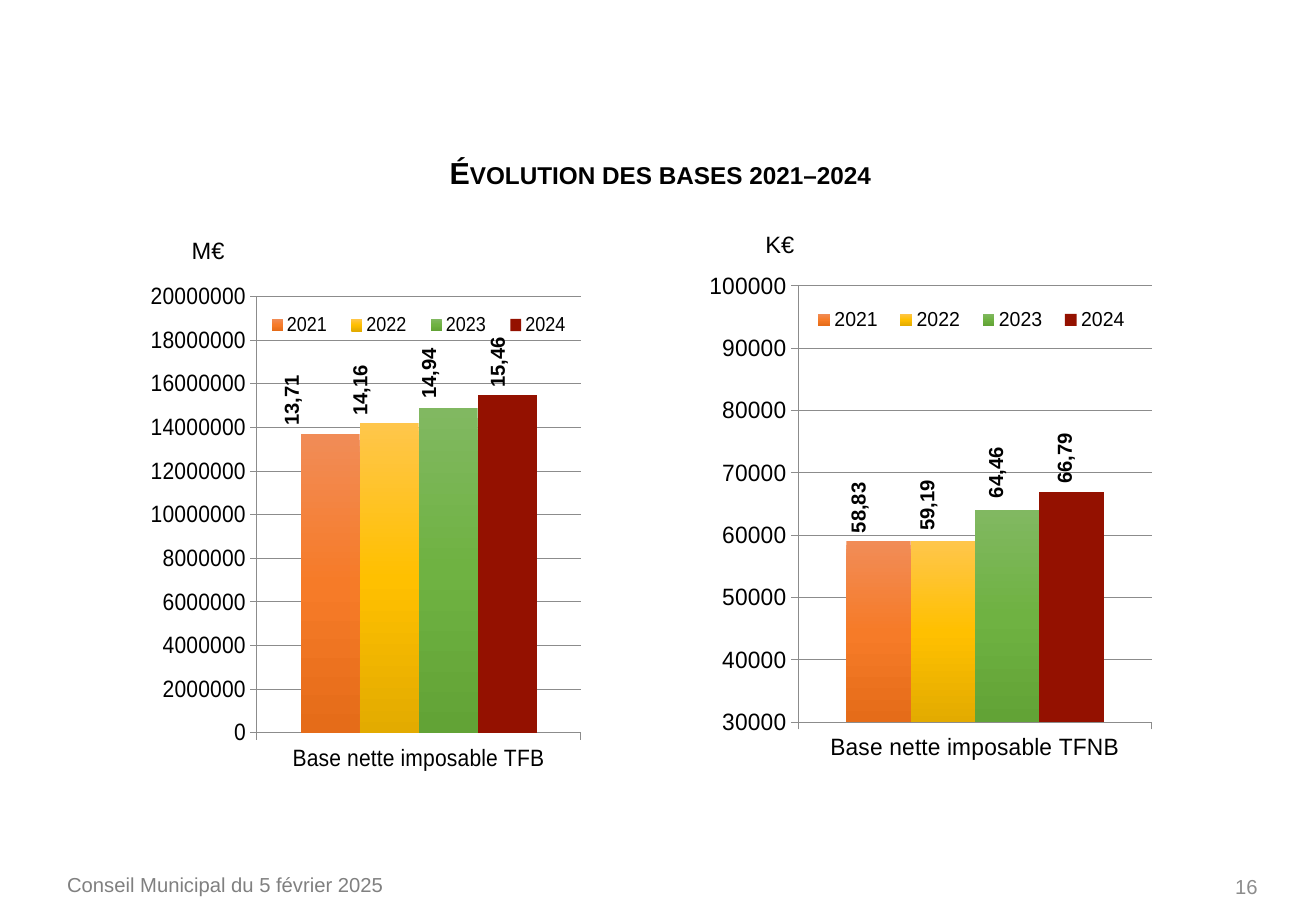
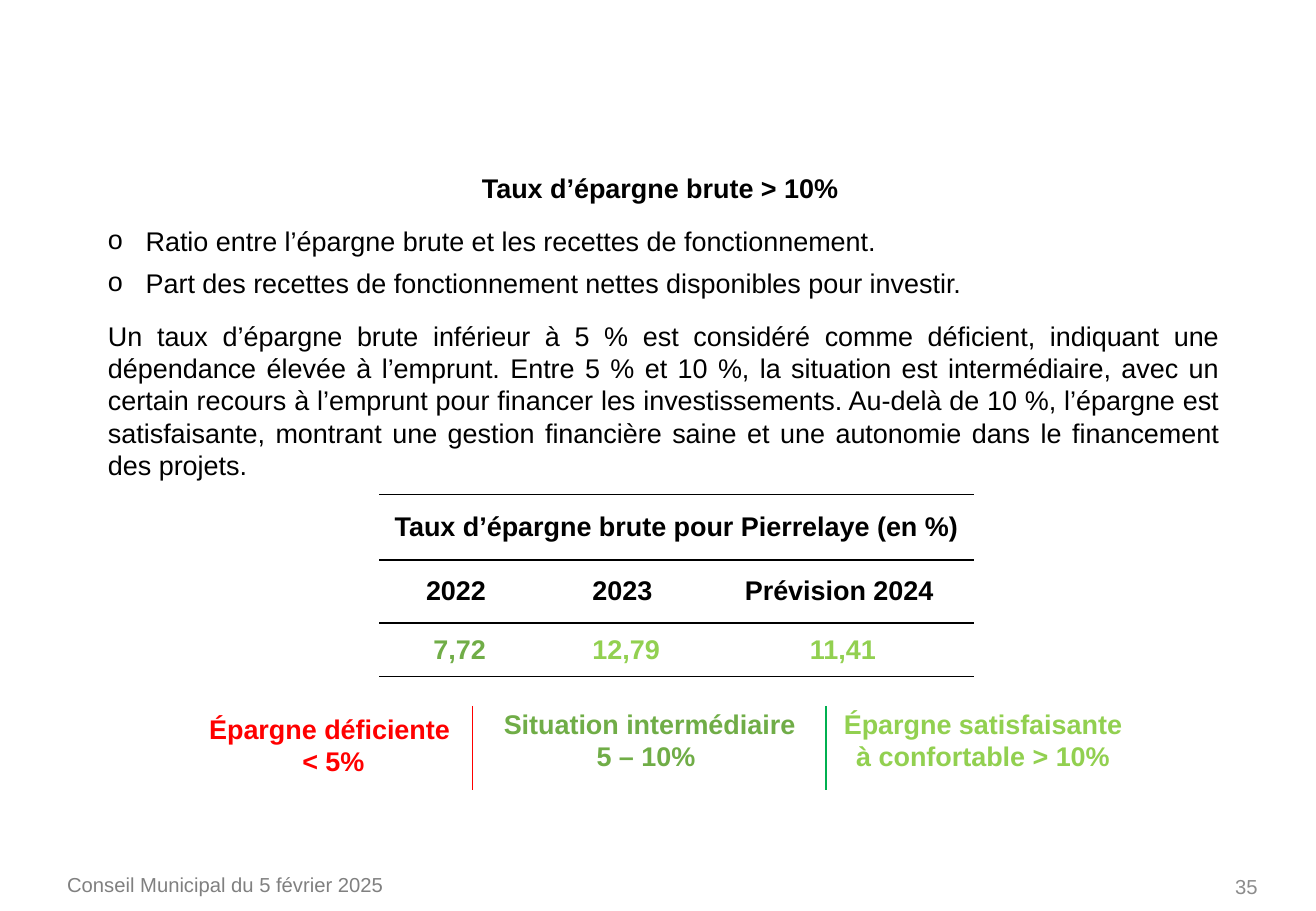
from pptx import Presentation
from pptx.chart.data import CategoryChartData
from pptx.dml.color import RGBColor
from pptx.enum.chart import XL_CHART_TYPE as ChartType, XL_LEGEND_POSITION as LegendPosition
from pptx.enum.shapes import MSO_CONNECTOR as Connector
from pptx.enum.text import MSO_ANCHOR as Anchor, PP_ALIGN as Align
from pptx.oxml import parse_xml
from pptx.oxml.ns import nsdecls
from pptx.util import Inches, Pt

BLACK = RGBColor(0x00, 0x00, 0x00)
FOOTER_GREY = RGBColor(0x80, 0x80, 0x80)
LINE_GREY = RGBColor(0x8C, 0x8C, 0x8C)
RED = RGBColor(0xFF, 0x00, 0x00)
DARK_RED = RGBColor(0x94, 0x11, 0x00)
GREEN = RGBColor(0x70, 0xAD, 0x47)
LIGHT_GREEN = RGBColor(0x92, 0xD0, 0x50)
DIVIDER_GREEN = RGBColor(0x00, 0xB0, 0x50)
ORANGE_SHADES = (RGBColor(0xF1, 0x8C, 0x57), RGBColor(0xF6, 0x7B, 0x28), RGBColor(0xE5, 0x6C, 0x19))
YELLOW_SHADES = (RGBColor(0xFF, 0xC6, 0x4B), RGBColor(0xFF, 0xC0, 0x00), RGBColor(0xE3, 0xAB, 0x00))
GREEN_SHADES = (RGBColor(0x81, 0xB8, 0x61), RGBColor(0x6F, 0xB2, 0x42), RGBColor(0x62, 0xA3, 0x36))
YEAR_FILLS = {"2021": ORANGE_SHADES, "2022": YELLOW_SHADES, "2023": GREEN_SHADES, "2024": DARK_RED}

FONT = "Arial"
FOOTER = "Conseil Municipal du 5 février 2025"
PLOT_HEIGHT = 0.836
CHART_TOP, CHART_HEIGHT = 29.67, 57.3
LABEL_STEP = 5.22


def write(paragraph, text, size=16, color=BLACK, bold=False, align=Align.LEFT,
          before=0, bullet=None, small_caps=False):
    paragraph.alignment = align
    if before:
        paragraph.space_before = Pt(before)
    if bullet:
        properties = paragraph._p.get_or_add_pPr()
        properties.set("marL", str(Inches(0.31)))
        properties.set("indent", str(Inches(-0.31)))
        properties.append(parse_xml(f'<a:buFont {nsdecls("a")} typeface="{FONT}"/>'))
        properties.append(parse_xml(f'<a:buChar {nsdecls("a")} char="{bullet}"/>'))
    run = paragraph.add_run()
    run.text = text
    run.font.name, run.font.size, run.font.bold = FONT, Pt(size), bold
    run.font.color.rgb = color
    if small_caps:
        run._r.get_or_add_rPr().set("cap", "small")


def manual_layout(x, y, width, height, inner=False):
    """Chart layout element, in shares of the chart's size."""
    target = '<c:layoutTarget val="inner"/>' if inner else ""
    return parse_xml(
        f'<c:layout {nsdecls("c")}><c:manualLayout>{target}'
        '<c:xMode val="edge"/><c:yMode val="edge"/>'
        f'<c:x val="{x}"/><c:y val="{y}"/><c:w val="{width}"/><c:h val="{height}"/>'
        '</c:manualLayout></c:layout>')


def cell_border(side, fill):
    return parse_xml(f'<a:{side} {nsdecls("a")} w="{Pt(1)}">{fill}</a:{side}>')


class Deck:
    """Style and current slide; lengths are percentages of the slide's size."""

    def __init__(self):
        self.presentation = Presentation()
        self.presentation.slide_width = Inches(10.83)
        self.presentation.slide_height = Inches(7.5)
        self.slide = None

    def columns(self, share):
        return int(self.presentation.slide_width * share / 100)

    def rows(self, share):
        return int(self.presentation.slide_height * share / 100)

    def place(self, left, top, width, height):
        return self.columns(left), self.rows(top), self.columns(width), self.rows(height)

    def new_slide(self, number):
        self.slide = self.presentation.slides.add_slide(self.presentation.slide_layouts[6])
        self.text((4.2, 95.07, 41.5, 4.9), FOOTER, size=12, color=FOOTER_GREY)
        self.text((73.98, 94.7, 22.5, 5.3), str(number), size=12, color=LINE_GREY,
                  align=Align.RIGHT, anchor=Anchor.MIDDLE)

    def text(self, box, *items, anchor=Anchor.TOP, rotation=0, **style):
        """Each item is a string, or a string with its own format."""
        shape = self.slide.shapes.add_textbox(*self.place(*box))
        shape.rotation = rotation
        frame = shape.text_frame
        frame.word_wrap = True
        frame.vertical_anchor = anchor
        for index, item in enumerate(items):
            paragraph = frame.add_paragraph() if index else frame.paragraphs[0]
            content, own = (item, {}) if isinstance(item, str) else item
            write(paragraph, content, **{**style, **own})

    def divider(self, x, top, bottom, color):
        line = self.slide.shapes.add_connector(
            Connector.STRAIGHT, self.columns(x), self.rows(top), self.columns(x), self.rows(bottom))
        line.line.color.rgb = color
        line.line.width = Pt(1)
        line.element.spPr.append(parse_xml(f'<a:effectLst {nsdecls("a")}/>'))

    def table(self, left, top, widths, heights, cells):
        """Each cell is a string and its colour; a row of one cell spans the table."""
        box = self.place(left, top, sum(widths), sum(heights))
        table = self.slide.shapes.add_table(len(heights), len(widths), *box).table
        table.first_row = table.horz_banding = False
        for column, width in zip(table.columns, widths):
            column.width = self.columns(width)
        for row, height in zip(table.rows, heights):
            row.height = self.rows(height)
        for row, contents in enumerate(cells):
            if len(contents) == 1:
                table.cell(row, 0).merge(table.cell(row, len(widths) - 1))
            for column, (text, color) in enumerate(contents):
                write(table.cell(row, column).text_frame.paragraphs[0], text,
                      color=color, bold=True, align=Align.CENTER)
        ruled = f'<a:solidFill><a:srgbClr val="{BLACK}"/></a:solidFill>'
        borders = {"lnL": "<a:noFill/>", "lnR": "<a:noFill/>", "lnT": ruled, "lnB": ruled}
        for cell in table.iter_cells():
            cell.vertical_anchor = Anchor.MIDDLE
            cell.fill.background()
            for index, (side, fill) in enumerate(borders.items()):
                cell._tc.get_or_add_tcPr().insert(index, cell_border(side, fill))

    def bar_chart(self, left, width, category, values, unit, digits, scale, plot, legend, first_label):
        """Bars by year, with upright labels that follow the bar tops."""
        data = CategoryChartData(number_format="General")
        data.categories = [category]
        for year, value in zip(YEAR_FILLS, values):
            data.add_series(year, [round(round(value, digits) * unit)])
        chart = self.slide.shapes.add_chart(
            ChartType.COLUMN_CLUSTERED, *self.place(left, CHART_TOP, width, CHART_HEIGHT), data).chart
        chart.has_title = False
        chart.font.name, chart.font.size = FONT, Pt(14)
        chart.font.color.rgb = BLACK
        self.style_bars(chart)
        self.style_axes(chart, scale)
        self.style_layout(chart, plot, legend)

        low, high, _ = scale
        label_left, label_top = first_label
        rise = PLOT_HEIGHT * CHART_HEIGHT * unit / (high - low)
        for index, value in enumerate(values):
            top = label_top - (value - values[0]) * rise
            self.text((label_left + index * LABEL_STEP, top, 6, 4),
                      f"{value:.2f}".replace(".", ","), size=12, bold=True, rotation=270)

    def style_bars(self, chart):
        plot = chart.plots[0]
        plot.gap_width, plot.overlap, plot.vary_by_categories = 150, 0, False
        gradients = []
        for series, color in zip(plot.series, YEAR_FILLS.values()):
            fill = series.format.fill
            if isinstance(color, RGBColor):
                fill.solid()
                fill.fore_color.rgb = color
            else:
                fill.gradient()
                fill.gradient_angle = 270
                gradients.append(color)
        for stops, shades in zip(chart.element.xpath(".//a:gsLst"), gradients):
            stops.clear()
            for index, shade in enumerate(shades):
                stops.append(parse_xml(f'<a:gs {nsdecls("a")} pos="{index * 50000}">'
                                       f'<a:srgbClr val="{shade}"/></a:gs>'))

    def style_axes(self, chart, scale):
        axis = chart.value_axis
        axis.minimum_scale, axis.maximum_scale, axis.major_unit = scale
        axis.has_major_gridlines = True
        for part in (axis, axis.major_gridlines, chart.category_axis):
            part.format.line.color.rgb = LINE_GREY
            part.format.line.width = Pt(0.5)

    def style_layout(self, chart, plot, legend):
        chart.has_legend = True
        chart.legend.position = LegendPosition.TOP
        chart.legend.include_in_layout = False
        chart.legend.font.name, chart.legend.font.size = FONT, Pt(12)
        chart.legend.font.color.rgb = BLACK
        for layout in chart.element.xpath(".//c:plotArea/c:layout | .//c:legend/c:layout"):
            layout.getparent().remove(layout)
        chart.element.xpath(".//c:plotArea")[0].insert(0, manual_layout(*plot, inner=True))
        chart.element.xpath(".//c:legendPos")[0].addnext(manual_layout(*legend))


def bases_slide(deck):
    deck.new_slide(16)
    deck.text((26.13, 16.3, 48.1, 5.3), "Évolution des bases 2021–2024",
              size=18, bold=True, align=Align.CENTER, small_caps=True)
    deck.text((13.65, 25.2, 4.6, 4.5), "M€", size=14)
    deck.bar_chart(11.45, 37.6, "Base nette imposable TFB", (13.71, 14.16, 14.94, 15.46),
                   unit=1000000, digits=1, scale=(0, 20000000, 2000000),
                   plot=(0.117, 0.05, 0.736, PLOT_HEIGHT), legend=(0.11, 0.08, 0.75, 0.05),
                   first_label=(19.1, 41.7))
    deck.text((57.25, 24.57, 4.6, 4.5), "K€", size=14)
    deck.bar_chart(53.9, 46.1, "Base nette imposable TFNB", (58.83, 59.19, 64.46, 66.79),
                   unit=1000, digits=0, scale=(30000, 100000, 10000),
                   plot=(0.113, 0.03, 0.606, PLOT_HEIGHT), legend=(0.12, 0.07, 0.58, 0.05),
                   first_label=(62.18, 53.5))


def savings_slide(deck):
    deck.new_slide(35)
    deck.text(
        (7.3, 18.17, 86.3, 35.7),
        ("Taux d’épargne brute > 10% ", {"bold": True, "align": Align.CENTER}),
        ("Ratio entre l’épargne brute et les recettes de fonctionnement.",
         {"bullet": "o", "before": 12}),
        ("Part des recettes de fonctionnement nettes disponibles pour investir.",
         {"bullet": "o", "before": 6}),
        ("Un taux d’épargne brute inférieur à 5 % est considéré comme déficient, indiquant une "
         "dépendance élevée à l’emprunt. Entre 5 % et 10 %, la situation est intermédiaire, avec "
         "un certain recours à l’emprunt pour financer les investissements. Au-delà de 10 %, "
         "l’épargne est satisfaisante, montrant une gestion financière saine et une autonomie "
         "dans le financement des projets.", {"align": Align.JUSTIFY, "before": 12}))
    deck.table(28.83, 54.27, (12.2, 13.1, 19.85), (7.2, 6.93, 5.87), [
        [("Taux d’épargne brute pour Pierrelaye (en %) ", BLACK)],
        [("2022 ", BLACK), ("2023 ", BLACK), ("Prévision 2024 ", BLACK)],
        [("7,72", GREEN), ("12,79", LIGHT_GREEN), ("11,41", LIGHT_GREEN)]])
    for x, color in ((35.9, RED), (62.77, DIVIDER_GREEN)):
        deck.divider(x, 77.47, 86.75, color)
    for left, top, width, color, lines in (
            (14.7, 77.57, 20.7, RED, ("Épargne déficiente", " < 5%")),
            (37.27, 76.97, 24.2, GREEN, ("Situation intermédiaire", "5 – 10% ")),
            (49.4, 76.97, 50.6, LIGHT_GREEN, ("Épargne satisfaisante", "à confortable > 10%"))):
        deck.text((left, top, width, 8.5), *lines, color=color, bold=True, align=Align.CENTER)


def main():
    deck = Deck()
    bases_slide(deck)
    savings_slide(deck)
    deck.presentation.save("out.pptx")


if __name__ == "__main__":
    main()
